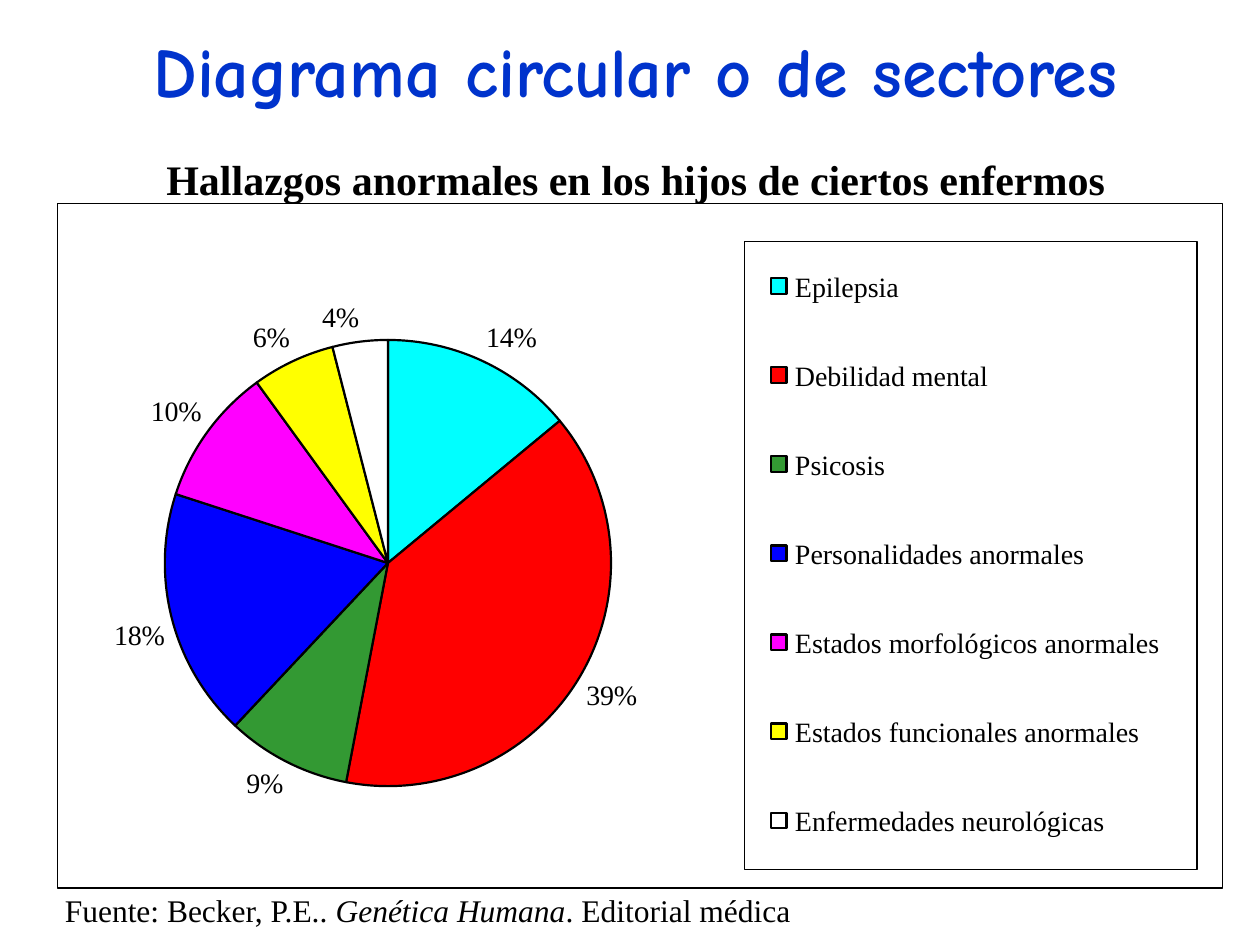
from dataclasses import dataclass

from lxml import etree
from pptx import Presentation
from pptx.chart.data import CategoryChartData
from pptx.dml.color import RGBColor
from pptx.enum.chart import XL_CHART_TYPE, XL_LABEL_POSITION
from pptx.enum.shapes import MSO_SHAPE
from pptx.enum.text import MSO_ANCHOR, MSO_AUTO_SIZE, PP_ALIGN
from pptx.oxml.ns import qn
from pptx.util import Pt

PIE = XL_CHART_TYPE.PIE
OUTSIDE = XL_LABEL_POSITION.OUTSIDE_END
RECT = MSO_SHAPE.RECTANGLE
TOP = MSO_ANCHOR.TOP
FIXED = MSO_AUTO_SIZE.NONE
CENTER = PP_ALIGN.CENTER


@dataclass(frozen=True)
class Theme:
    serif: str = "Times New Roman"
    comic: str = "Comic Neue"
    ink: str = "000000"
    paper: str = "FFFFFF"
    blue: str = "0033CC"
    title: float = 40
    head: float = 24
    source: float = 18
    label: float = 16
    edge: float = 1.25
    hair: float = 0


@dataclass(frozen=True)
class Box:
    left: float
    top: float
    width: float
    height: float

    def place(self) -> tuple:
        return Pt(self.left), Pt(self.top), Pt(self.width), Pt(self.height)


@dataclass(frozen=True)
class Sector:
    name: str
    share: float
    color: str


@dataclass(frozen=True)
class Run:
    text: str
    bold: bool = False
    italic: bool = False


THEME = Theme()
SECTORS = [
    Sector("Epilepsia", 0.14, "00FFFF"),
    Sector("Debilidad mental", 0.39, "FF0000"),
    Sector("Psicosis", 0.09, "339933"),
    Sector("Personalidades anormales", 0.18, "0000FF"),
    Sector("Estados morfológicos anormales", 0.10, "FF00FF"),
    Sector("Estados funcionales anormales", 0.06, "FFFF00"),
    Sector("Enfermedades neurológicas", 0.04, "FFFFFF"),
]
FRAME = Box(33, 116.5, 665.5, 391)
LEGEND = Box(425.5, 138, 258.5, 359)
KEY = Box(440.5, 159, 9, 9)
ROW = 50.9
CENTRE = (221.7, 321.8)
RADIUS = 127.5
SIDE = 340


def style(font, size: float, color: str = THEME.ink, face: str = THEME.serif) -> None:
    font.name, font.size = face, Pt(size)
    font.color.rgb = RGBColor.from_string(color)


def paint(part, fill: str, width: float) -> None:
    part.fill.solid()
    part.fill.fore_color.rgb = RGBColor.from_string(fill)
    part.line.color.rgb = RGBColor.from_string(THEME.ink)
    part.line.width = Pt(width)


def add_box(slide, box: Box, fill: str, width: float) -> None:
    shape = slide.shapes.add_shape(RECT, *box.place())
    shape.shadow.inherit = False
    paint(shape, fill, width)


def add_text(slide, box: Box, runs: list[Run], size: float,
             wrap: bool = False, inset: bool = True) -> None:
    frame = slide.shapes.add_textbox(*box.place()).text_frame
    frame.word_wrap = wrap
    if not inset:
        frame.margin_left = frame.margin_right = 0
        frame.margin_top = frame.margin_bottom = 0
    for item in runs:
        run = frame.paragraphs[0].add_run()
        run.text = item.text
        style(run.font, size)
        run.font.bold, run.font.italic = item.bold, item.italic


def add_title(slide, text: str) -> None:
    title = slide.shapes.title
    title.left, title.top, title.width, title.height = Box(24, 12, 678, 55.5).place()
    frame = title.text_frame
    frame.auto_size, frame.vertical_anchor = FIXED, TOP
    line = frame.paragraphs[0]
    line.alignment = CENTER
    run = line.add_run()
    run.text = text
    style(run.font, THEME.title, THEME.blue, THEME.comic)
    run.font.bold = True


def fix_plot(plot, share: float) -> None:
    """Centre the plot and let it fill the given share of the chart."""
    area = plot._element.getparent()
    for old in area.findall(qn("c:layout")):
        area.remove(old)
    layout = etree.Element(qn("c:layout"))
    manual = etree.SubElement(layout, qn("c:manualLayout"))
    gap = (1 - share) / 2
    rules = {"layoutTarget": "inner", "xMode": "edge", "yMode": "edge",
             "x": gap, "y": gap, "w": share, "h": share}
    for tag, value in rules.items():
        etree.SubElement(manual, qn(f"c:{tag}")).set("val", str(value))
    area.insert(0, layout)


def add_pie(slide) -> None:
    data = CategoryChartData(number_format="0%")
    data.categories = [sector.name for sector in SECTORS]
    data.add_series("Hallazgos anormales", [sector.share for sector in SECTORS])
    box = Box(CENTRE[0] - SIDE / 2, CENTRE[1] - SIDE / 2, SIDE, SIDE)
    chart = slide.shapes.add_chart(PIE, *box.place(), data).chart
    chart.has_title = chart.has_legend = False
    style(chart.font, THEME.label)
    plot = chart.plots[0]
    plot.vary_by_categories = True
    for index, sector in enumerate(SECTORS):
        paint(plot.series[0].points[index].format, sector.color, THEME.edge)
    plot.has_data_labels = True
    labels = plot.data_labels
    labels.show_value, labels.position = True, OUTSIDE
    labels.number_format, labels.number_format_is_linked = "0%", False
    style(labels.font, THEME.label)
    fix_plot(plot, round(2 * RADIUS / SIDE, 2))


def add_legend(slide) -> None:
    add_box(slide, LEGEND, THEME.paper, THEME.hair)
    for index, sector in enumerate(SECTORS):
        top = KEY.top + index * ROW
        add_box(slide, Box(KEY.left, top, KEY.width, KEY.height),
                sector.color, THEME.edge)
        add_text(slide, Box(KEY.left + 13.8, top - 5, 225, 25),
                 [Run(sector.name)], THEME.label, inset=False)


def main() -> None:
    deck = Presentation()
    deck.slide_width, deck.slide_height = Pt(720), Pt(540)
    slide = deck.slides.add_slide(deck.slide_layouts[5])
    add_title(slide, "Diagrama circular o de sectores")
    add_text(slide, Box(30, 505.5, 463, 29),
             [Run("Fuente: Becker, P.E.. "), Run("Genética Humana", italic=True),
              Run(". Editorial médica")], THEME.source, wrap=True)
    add_text(slide, Box(88, 84, 556, 36),
             [Run("Hallazgos anormales en los hijos de ciertos enfermos", bold=True)],
             THEME.head)
    add_box(slide, FRAME, THEME.paper, THEME.hair)
    add_pie(slide)
    add_legend(slide)
    deck.save("out.pptx")


if __name__ == "__main__":
    main()
